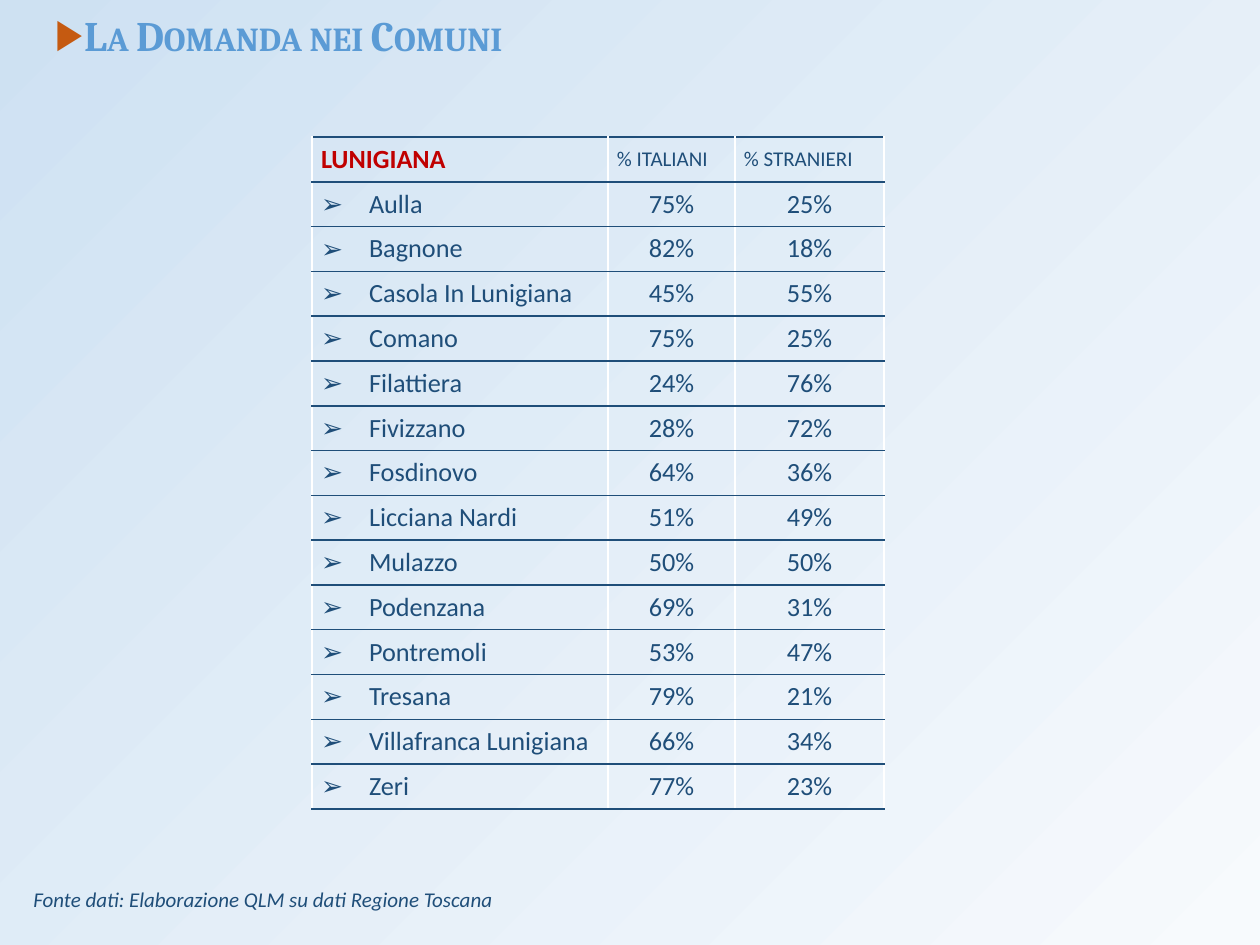
from lxml import etree
from pptx import Presentation
from pptx.dml.color import RGBColor
from pptx.enum.text import MSO_ANCHOR, MSO_AUTO_SIZE, PP_ALIGN
from pptx.oxml.ns import qn
from pptx.util import Pt

LEFT, CENTER = PP_ALIGN.LEFT, PP_ALIGN.CENTER
TOP, MIDDLE = MSO_ANCHOR.TOP, MSO_ANCHOR.MIDDLE
GROW = MSO_AUTO_SIZE.SHAPE_TO_FIT_TEXT

# Content
TITLE = "La Domanda nei Comuni"
SOURCE = "Fonte dati: Elaborazione QLM su dati Regione Toscana"
HEADER = ("LUNIGIANA", "% ITALIANI", "% STRANIERI")
TOWNS = [
    ("Aulla", 75, 25),
    ("Bagnone", 82, 18),
    ("Casola In Lunigiana", 45, 55),
    ("Comano", 75, 25),
    ("Filattiera", 24, 76),
    ("Fivizzano", 28, 72),
    ("Fosdinovo", 64, 36),
    ("Licciana Nardi", 51, 49),
    ("Mulazzo", 50, 50),
    ("Podenzana", 69, 31),
    ("Pontremoli", 53, 47),
    ("Tresana", 79, 21),
    ("Villafranca Lunigiana", 66, 34),
    ("Zeri", 77, 23),
]

THEME = {
    "heading_font": "Cambria", "body_font": "Calibri",
    "title": "5B9BD5", "text": "1F4E79", "accent": "C00000", "marker": "C55A11",
    "grid": "FFFFFF", "background": ("F7FAFD", "CEE1F2"),
    "title_size": 24, "body_size": 15, "small_size": 12,
}

# Layout in px
SLIDE = (1260, 945)
TITLE_BOX = (0, 3, 572, 63)
SOURCE_BOX = (21, 880, 518, 38)
TABLE_BOX = (312, 137, 572, 672)
COLUMN_WIDTHS = (296, 127, 149)
CELL_INSETS = (9, 5)
TITLE_INDENT, TITLE_RIGHT_INSET, TOWN_INDENT = 29, 27, 48


def px(length):
    return round(length * 914400 / 126)


def style(paragraph, size, color, font=THEME["body_font"], bold=False,
          italic=False, align=LEFT):
    paragraph.alignment = align
    run_font = paragraph.runs[0].font
    run_font.name, run_font.size = font, Pt(size)
    run_font.bold, run_font.italic = bold, italic
    run_font.color.rgb = RGBColor.from_string(color)
    return run_font


def add_bullet(paragraph, character, indent, color=None):
    properties = paragraph._p.get_or_add_pPr()
    properties.set("marL", str(px(indent)))
    properties.set("indent", str(-px(indent)))
    if color:
        holder = etree.SubElement(properties, qn("a:buClr"))
        etree.SubElement(holder, qn("a:srgbClr"), val=color)
    etree.SubElement(properties, qn("a:buFont"), typeface="Arial")
    etree.SubElement(properties, qn("a:buChar"), char=character)


def format_cell(cell):
    cell.vertical_anchor = MIDDLE
    horizontal, vertical = map(px, CELL_INSETS)
    cell.margin_left = cell.margin_right = horizontal
    cell.margin_top = cell.margin_bottom = vertical
    properties = cell._tc.get_or_add_tcPr()
    for side in "LRTB":
        line = etree.SubElement(properties, qn(f"a:ln{side}"), w=str(Pt(1)))
        fill = etree.SubElement(line, qn("a:solidFill"))
        color = THEME["grid"] if side in "LR" else THEME["text"]
        etree.SubElement(fill, qn("a:srgbClr"), val=color)
    cell.fill.background()


presentation = Presentation()
presentation.slide_width, presentation.slide_height = map(px, SLIDE)
slide = presentation.slides.add_slide(presentation.slide_layouts[5])

# Background
background = slide.background.fill
background.gradient()
background.gradient_angle = 135
for stop, color in zip(background.gradient_stops, THEME["background"]):
    stop.color.rgb = RGBColor.from_string(color)

# Title
title = slide.shapes.title
title.left, title.top, title.width, title.height = map(px, TITLE_BOX)
frame = title.text_frame
frame.text = TITLE
frame.word_wrap, frame.auto_size, frame.vertical_anchor = True, GROW, TOP
frame.margin_right = px(TITLE_RIGHT_INSET)
title_font = style(frame.paragraphs[0], THEME["title_size"], THEME["title"],
                   THEME["heading_font"], bold=True, align=CENTER)
title_font._element.set("cap", "small")
add_bullet(frame.paragraphs[0], "▶", TITLE_INDENT, THEME["marker"])

# Data source
source = slide.shapes.add_textbox(*map(px, SOURCE_BOX)).text_frame
source.text = SOURCE
source.word_wrap, source.auto_size = True, GROW
style(source.paragraphs[0], THEME["small_size"], THEME["text"], italic=True)

# Table
rows = [HEADER] + [(town, f"{italian}%", f"{foreign}%")
                   for town, italian, foreign in TOWNS]
table = slide.shapes.add_table(len(rows), len(HEADER), *map(px, TABLE_BOX)).table
table.first_row = table.horz_banding = False
for column, width in zip(table.columns, COLUMN_WIDTHS):
    column.width = px(width)
for row in table.rows:
    row.height = px(TABLE_BOX[3] / len(rows))

for row_index, values in enumerate(rows):
    for column_index, value in enumerate(values):
        cell = table.cell(row_index, column_index)
        cell.text = value
        format_cell(cell)
        paragraph = cell.text_frame.paragraphs[0]
        is_header, is_name = row_index == 0, column_index == 0
        if is_header and is_name:
            style(paragraph, THEME["body_size"], THEME["accent"], bold=True)
        elif is_header:
            style(paragraph, THEME["small_size"], THEME["text"])
        else:
            style(paragraph, THEME["body_size"], THEME["text"],
                  align=LEFT if is_name else CENTER)
            if is_name:
                add_bullet(paragraph, "➢", TOWN_INDENT)

presentation.save("out.pptx")
